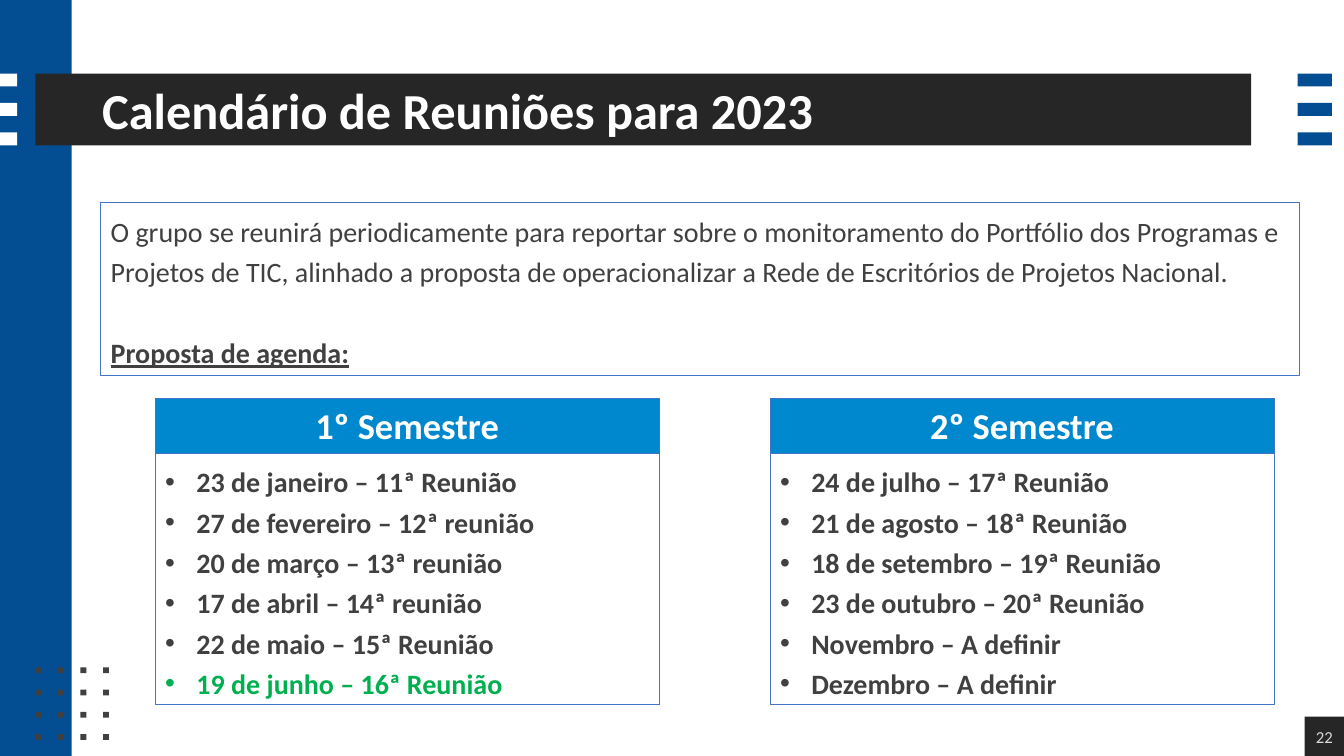
import pptx
import pptx.util
import pptx.dml.color
import pptx.enum.shapes
import pptx.enum.text
import pptx.oxml.ns
import lxml.etree

WIDTH, HEIGHT = 13.33, 7.5
BLUE, DARK, GREY, WHITE = "034D92", "262626", "404040", "FFFFFF"
SKY, OUTLINE, GREEN = "0088CF", "4472C4", "00B050"
LEFT = pptx.enum.text.PP_ALIGN.LEFT
CENTER = pptx.enum.text.PP_ALIGN.CENTER
TOP = pptx.enum.text.MSO_ANCHOR.TOP
MIDDLE = pptx.enum.text.MSO_ANCHOR.MIDDLE

INTRO = ("O grupo se reunirá periodicamente para reportar sobre o monitoramento do "
         "Portfólio dos Programas e Projetos de TIC, alinhado a proposta de "
         "operacionalizar a Rede de Escritórios de Projetos Nacional.")
FIRST_HALF = ["23 de janeiro – 11ª Reunião", "27 de fevereiro – 12ª reunião",
              "20 de março – 13ª reunião", "17 de abril – 14ª reunião",
              "22 de maio – 15ª Reunião", "19 de junho – 16ª Reunião"]
SECOND_HALF = ["24 de julho – 17ª Reunião", "21 de agosto – 18ª Reunião",
               "18 de setembro – 19ª Reunião", "23 de outubro – 20ª Reunião",
               "Novembro – A definir", "Dezembro – A definir"]


def color(hex_code):
    """Turn a hex string into a colour."""
    return pptx.dml.color.RGBColor.from_string(hex_code)


def place(box):
    """Convert a box in percent of the slide's width and height to lengths."""
    x, y, w, h = box
    return [pptx.util.Inches(share * size / 100) for share, size in
            ((x, WIDTH), (y, HEIGHT), (w, WIDTH), (h, HEIGHT))]


def add_rect(s, box, fill=None, line=None):
    """Add a rectangle with optional fill and outline."""
    sp = s.shapes.add_shape(pptx.enum.shapes.MSO_SHAPE.RECTANGLE, *place(box))
    sp.shadow.inherit = False
    if fill:
        sp.fill.solid()
        sp.fill.fore_color.rgb = color(fill)
    else:
        sp.fill.background()
    if line:
        sp.line.color.rgb = color(line)
        sp.line.width = pptx.util.Pt(0.75)
    else:
        sp.line.fill.background()
    return sp


def write(sp, lines, size, hex_code, bold=False, align=LEFT, anchor=TOP,
          spacing=1.0, bullet=False):
    """Fill a shape with paragraphs of one style and return them."""
    tf = sp.text_frame
    tf.word_wrap = True
    tf.vertical_anchor = anchor
    tf.text = "\n".join(lines)
    for p in tf.paragraphs:
        if bullet:
            add_bullet(p)
        p.alignment = align
        p.line_spacing = spacing
        for r in p.runs:
            r.font.name = "Calibri"
            r.font.size = pptx.util.Pt(size)
            r.font.bold = bold
            r.font.color.rgb = color(hex_code)
    return tf.paragraphs


def add_bullet(p):
    """Give a paragraph a hanging round bullet."""
    pPr = p._p.get_or_add_pPr()
    indent = pptx.util.Inches(0.31)
    pPr.set("marL", str(indent))
    pPr.set("indent", str(-indent))
    qn = pptx.oxml.ns.qn
    lxml.etree.SubElement(pPr, qn("a:buFont")).set("typeface", "Arial")
    lxml.etree.SubElement(pPr, qn("a:buChar")).set("char", "•")


def add_stripes(s, box, fill):
    """Stack three stripes evenly in the box."""
    x, y, w, h = box
    stripe = 0.18 * h
    for row in range(3):
        add_rect(s, (x, y + row * (h - stripe) / 2, w, stripe), fill)


def add_dots(s, box, count=4):
    """Spread a square grid of dots over the box."""
    x, y, w, h = box
    dot_w, dot_h = 0.08 * w, 0.08 * h
    for row in range(count):
        for col in range(count):
            add_rect(s, (x + col * (w - dot_w) / (count - 1),
                         y + row * (h - dot_h) / (count - 1), dot_w, dot_h), GREY)


def add_title(s, box, text):
    """Draw the dark title bar and its title."""
    x, y, w, h = box
    add_rect(s, box, DARK)
    title = s.shapes.add_textbox(*place((x + 0.05 * w, y, 0.95 * w, h)))
    title.text_frame.margin_left = pptx.util.Inches(0.06)
    write(title, [text], 36, WHITE, bold=True, anchor=MIDDLE)


def add_page_number(s, box, number):
    """Draw the page number in its corner square."""
    sp = add_rect(s, box, DARK)
    tf = sp.text_frame
    tf.margin_left = tf.margin_right = tf.margin_top = tf.margin_bottom = 0
    write(sp, [number], 12, "D9D9D9", align=CENTER, anchor=MIDDLE)


def add_intro(s, box, text, heading):
    """Draw the outlined introduction with its underlined heading."""
    sp = add_rect(s, box, line=OUTLINE)
    last = write(sp, [text, heading], 20, GREY, spacing=1.2)[-1]
    last.space_before = pptx.util.Pt(29)
    last.runs[0].font.bold = True
    last.runs[0].font.underline = True


def add_semester(s, box, heading, meetings, highlight=None):
    """Draw a semester card: header band above a list of meetings."""
    x, y, w, h = box
    band = 0.18 * h
    body = add_rect(s, (x, y + band, w, h - band), line=OUTLINE)
    paragraphs = write(body, meetings, 20, GREY, bold=True, spacing=1.2, bullet=True)
    if highlight is not None:
        paragraphs[highlight].runs[0].font.color.rgb = color(GREEN)
    header = add_rect(s, (x, y, w, band), SKY, OUTLINE)
    write(header, [heading], 26, WHITE, bold=True, align=CENTER)


def main():
    """Build and save the slide."""
    prs = pptx.Presentation()
    prs.slide_width = pptx.util.Inches(WIDTH)
    prs.slide_height = pptx.util.Inches(HEIGHT)
    s = prs.slides.add_slide(prs.slide_layouts[6])
    bar_y, bar_h = 9.73, 9.5
    add_rect(s, (0, 0, 5.33, 100), BLUE)
    add_stripes(s, (0, bar_y, 1.28, bar_h), WHITE)
    add_stripes(s, (96.55, bar_y, 2.55, bar_h), BLUE)
    add_dots(s, (2.63, 88.27, 5.48, 9.6))
    add_title(s, (2.63, bar_y, 90.47, bar_h), "Calendário de Reuniões para 2023")
    add_intro(s, (7.5, 26.8, 89.2, 22.93), INTRO, "Proposta de agenda:")
    add_semester(s, (11.55, 52.67, 37.5, 40.5), "1º Semestre", FIRST_HALF, highlight=-1)
    add_semester(s, (57.3, 52.67, 37.5, 40.5), "2º Semestre", SECOND_HALF)
    add_page_number(s, (97.07, 94.8, 2.93, 5.2), "22")
    prs.save("out.pptx")


if __name__ == "__main__":
    main()
